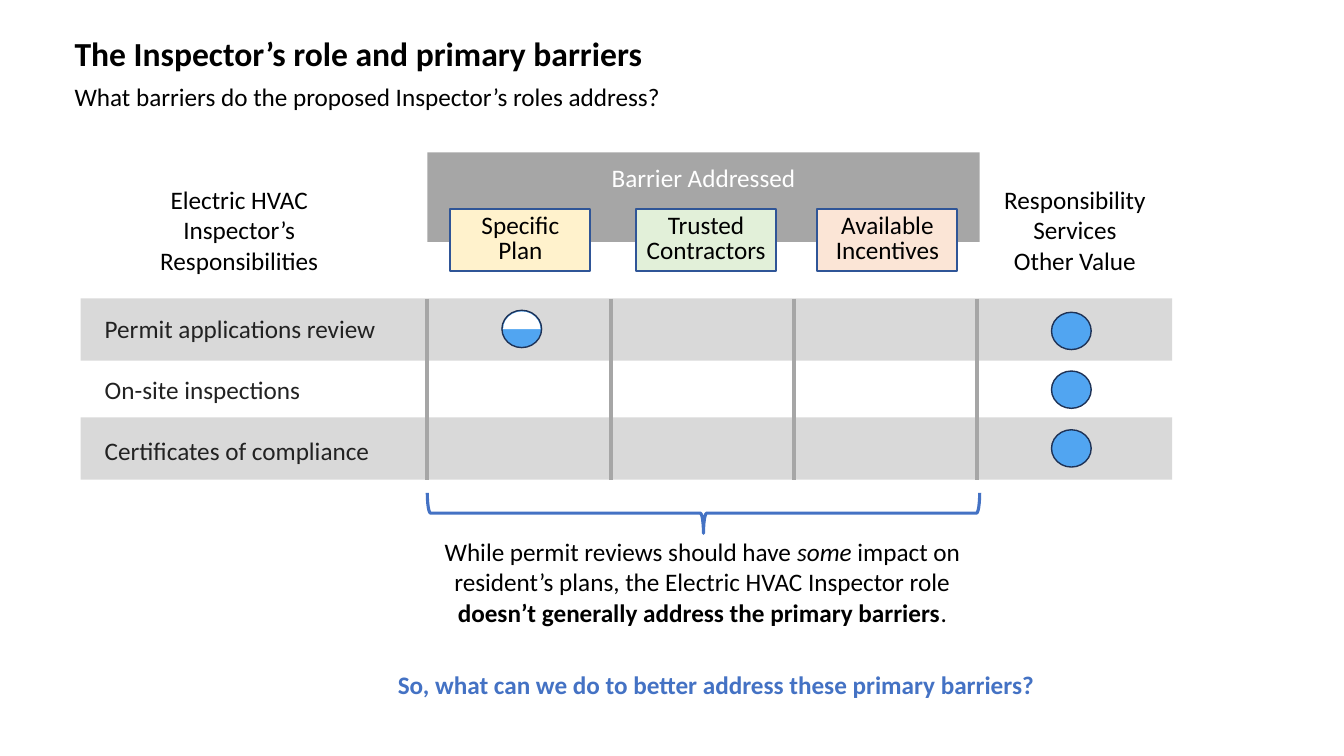
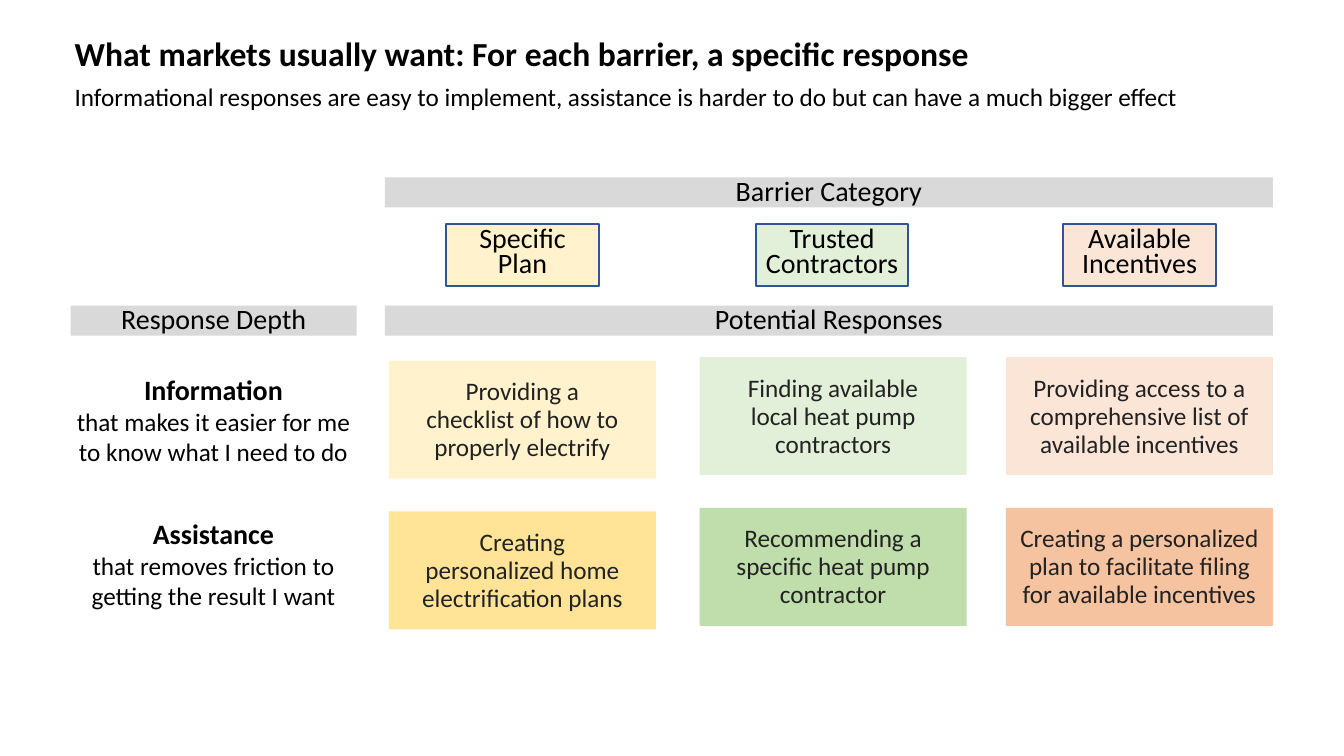
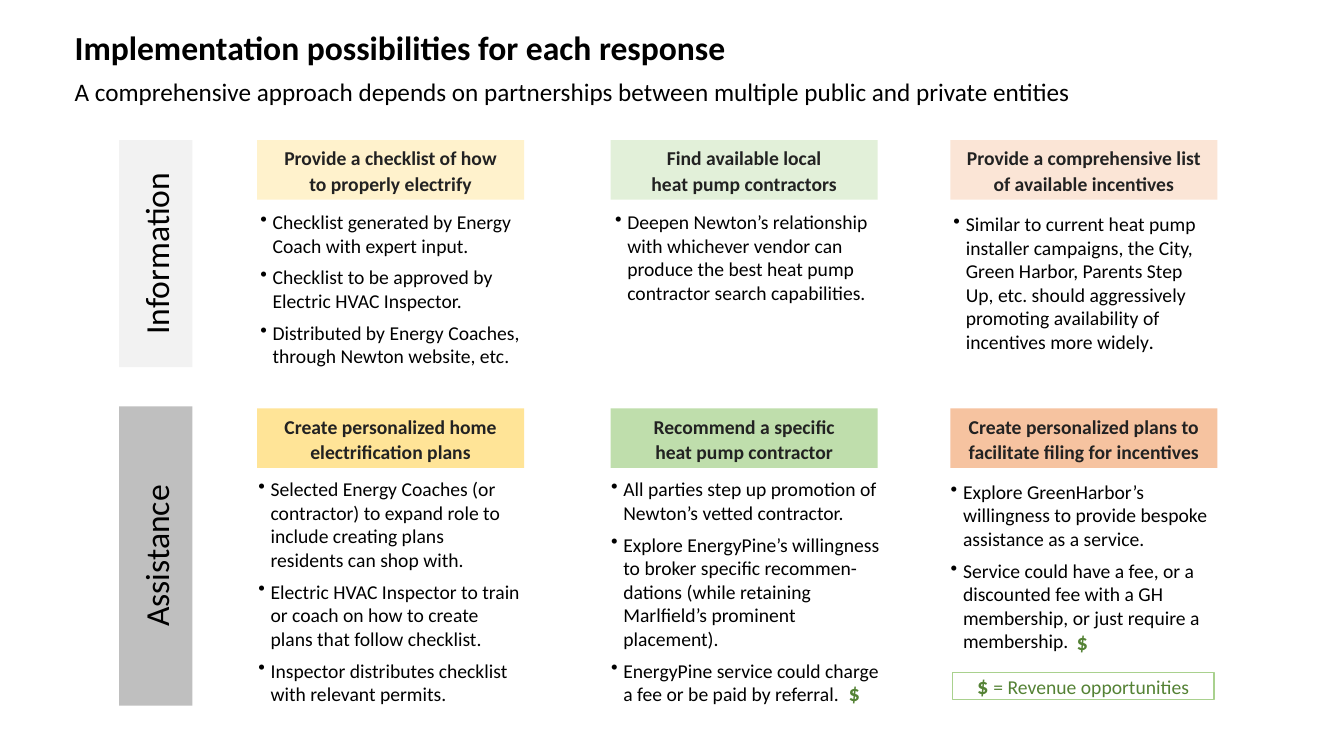
from lxml import etree
from pptx import Presentation
from pptx.dml.color import RGBColor
from pptx.enum.shapes import MSO_CONNECTOR, MSO_SHAPE
from pptx.enum.text import MSO_ANCHOR, PP_ALIGN
from pptx.oxml.ns import qn
from pptx.util import Cm, Pt

FONT = "Calibri"
BLACK, DARK, WHITE = "000000", "222222", "FFFFFF"
BLUE, OUTLINE, GREEN = "4472C4", "2F5597", "548235"
GREY, BAND = "A6A6A6", "D9D9D9"
DOT, DOT_LINE = "51A5F1", "1E3256"
# Barrier name, light fill, strong fill
BARRIERS = [
    ("Specific Plan", "FFF2CC", "FFE497"),
    ("Trusted Contractors", "E2F0D9", "BFDEAC"),
    ("Available Incentives", "FBE5D6", "F6C3A0"),
]
BOLD = {"bold": True}
PLAIN = {"size": Pt(18), "bold": False}


def box(s, x, y, w, h, fill=None, line=None, width=1, kind=MSO_SHAPE.RECTANGLE):
    """Add a preset shape, or a text box when it has neither fill nor line."""
    at = Cm(x), Cm(y), Cm(w), Cm(h)
    if not (fill or line):
        return s.shapes.add_textbox(*at)
    sp = s.shapes.add_shape(kind, *at)
    sp.shadow.inherit = False
    if fill:
        sp.fill.solid()
        sp.fill.fore_color.rgb = RGBColor.from_string(fill)
    else:
        sp.fill.background()
    if line:
        sp.line.color.rgb = RGBColor.from_string(line)
        sp.line.width = Pt(width)
    else:
        sp.line.fill.background()
    return sp


def write(sp, *paragraphs, size=18, color=BLACK, bold=False, align=PP_ALIGN.CENTER,
          leading=None, after=0, anchor=MSO_ANCHOR.TOP,
          inset=(0.25, 0.13, 0.25, 0.13), bullet=False):
    """Fill a shape; a paragraph is a string or a list of (text, font changes)."""
    tf = sp.text_frame
    tf.word_wrap = True
    tf.vertical_anchor = anchor
    tf.margin_left, tf.margin_top, tf.margin_right, tf.margin_bottom = map(Cm, inset)
    for i, runs in enumerate(paragraphs):
        p = tf.add_paragraph() if i else tf.paragraphs[0]
        p.alignment = align
        p.space_after = Pt(after)
        if leading:
            p.line_spacing = Pt(leading)
        if bullet:
            pPr = p._p.get_or_add_pPr()
            pPr.set("marL", str(Cm(0.31)))
            pPr.set("indent", str(-Cm(0.31)))
            etree.SubElement(pPr, qn("a:buChar"), char="•")
        for text, changes in [(runs, {})] if isinstance(runs, str) else runs:
            for j, part in enumerate(text.split("\n")):
                if j:
                    p.add_line_break()
                r = p.add_run()
                r.text = part
                r.font.name = FONT
                r.font.size = Pt(size)
                r.font.bold = bold
                r.font.color.rgb = RGBColor.from_string(color)
                for name, value in changes.items():
                    setattr(r.font, name, value)


prs = Presentation()
prs.slide_width, prs.slide_height = Cm(33.87), Cm(19.05)

# Titles
slides = []
for y, title, subtitle in [
    (0.69, "The Inspector’s role and primary barriers",
     "What barriers do the proposed Inspector’s roles address?"),
    (0.69, "What markets usually want: For each barrier, a specific response",
     "Informational responses are easy to implement, assistance is harder to do "
     "but can have a much bigger effect"),
    (0.56, "Implementation possibilities for each response",
     "A comprehensive approach depends on partnerships between multiple public "
     "and private entities"),
]:
    s = prs.slides.add_slide(prs.slide_layouts[6])
    write(box(s, 1.63, y, 30.56, 2.26), [(title, {"size": Pt(24), "bold": True})],
          subtitle, align=PP_ALIGN.LEFT, after=6)
    slides.append(s)
roles, responses, options = slides

# Slide 1: responsibilities against barriers
s = roles
write(box(s, 10.77, 3.84, 13.92, 2.26, GREY), "Barrier Addressed",
      color=WHITE, inset=(0.25, 0.25, 0.25, 0.13))
for y in (7.52, 10.52):
    box(s, 2.03, y, 27.51, 1.57, BAND)
write(box(s, 2.39, 7.77, 8.66, 4.11), "Permit applications review",
      "On-site inspections", "Certificates of compliance",
      color=DARK, align=PP_ALIGN.LEFT, after=22)
write(box(s, 2.13, 4.52, 7.8, 2.57), "Electric HVAC", "Inspector’s\nResponsibilities")
write(box(s, 24.97, 4.52, 4.24, 2.57), "Responsibility Services Other Value")

for row in range(3):
    box(s, 26.5, 7.87 + 1.48 * row, 1, 0.94, DOT, DOT_LINE, kind=MSO_SHAPE.OVAL)
box(s, 12.65, 7.82, 1, 0.94, DOT, DOT_LINE, kind=MSO_SHAPE.OVAL)
half = box(s, 12.68, 7.85, 0.94, 0.89, WHITE, kind=MSO_SHAPE.PIE)
half.adjustments[0], half.adjustments[1] = 108, 0

for col in range(4):
    x = Cm(10.77 + 4.62 * col)
    divider = s.shapes.add_connector(MSO_CONNECTOR.STRAIGHT, x, Cm(7.53), x, Cm(12.09))
    divider.line.color.rgb = RGBColor.from_string(GREY)
    divider.line.width = Pt(3)
    etree.SubElement(divider._element.spPr, qn("a:effectLst"))

brace = box(s, 17.22, 5.97, 1.02, 13.92, None, BLUE, 2.25, MSO_SHAPE.LEFT_BRACE)
brace.adjustments[0], brace.adjustments[1] = 0.08, 0.5
brace.rotation = 270
write(box(s, 10.74, 13.39, 13.92, 2.57), [
    ("While permit reviews should have ", {}),
    ("some", {"italic": True}),
    (" impact on resident’s plans, the Electric HVAC Inspector role ", {}),
    ("doesn’t generally address the primary barriers", BOLD),
    (".", {}),
])
write(box(s, 9.58, 16.74, 16.94, 1.02),
      "So, what can we do to better address these primary barriers?",
      color=BLUE, bold=True)

# Barrier chips on slides 1 and 2
for s, xs, y, w, size in [
    (roles, (11.35, 16.03, 20.6), 5.26, 3.53, 18),
    (responses, (11.25, 19.05, 26.8), 5.64, 3.84, 20),
]:
    for x, (name, light, strong) in zip(xs, BARRIERS):
        write(box(s, x, y, w, 1.56, light, OUTLINE, 1.5), name,
              size=size, leading=18, inset=(0.2, 0.13, 0.2, 0.13))

# Slide 2: responses by barrier and depth
s = responses
for x, y, w, heading in [
    (9.7, 4.47, 22.38, "Barrier Category"),
    (1.78, 7.7, 7.21, "Response Depth"),
    (9.7, 7.7, 22.38, "Potential Responses"),
]:
    write(box(s, x, y, w, 0.76, BAND), heading, size=20, leading=18,
          anchor=MSO_ANCHOR.MIDDLE, inset=(0.25, 0.1, 0.25, 0))
for y, depth, meaning in [
    (9.25, "Information", "that makes it easier for me to know what I need to do"),
    (12.88, "Assistance", "that removes friction to getting the result I want"),
]:
    write(box(s, 1.47, y, 7.82, 2.64),
          [(depth, BOLD), ("\n" + meaning, PLAIN)], size=20)

# Left, top, then (text, side inset) for information and assistance
RESPONSES = [
    (9.8, 9.09, ("Providing a checklist of how to properly electrify", 0.89),
     ("Creating personalized home electrification plans", 0.74)),
    (17.63, 9, ("Finding available local heat pump contractors", 1.04),
     ("Recommending a specific heat pump contractor", 0.74)),
    (25.35, 9, ("Providing access to a comprehensive list of available incentives", 0.58),
     ("Creating a personalized plan to facilitate filing for available incentives", 0.25)),
]
for (x, y, *cells), (name, *fills) in zip(RESPONSES, BARRIERS):
    for row, ((text, side), fill) in enumerate(zip(cells, fills)):
        write(box(s, x, y + 3.8 * row, 6.73, 2.97, fill), text, color=DARK,
              leading=20, anchor=MSO_ANCHOR.MIDDLE, inset=(side, 0.13, side, 0.13))

# Slide 3: implementation by depth and barrier
s = options
for depth, y, length, fill in [
    ("Information", 3.53, 5.72, "F2F2F2"),
    ("Assistance", 10.24, 7.54, "BFBFBF"),
]:
    thick = 1.85
    bar = box(s, 3 + (thick - length) / 2, y + (length - thick) / 2, length, thick, fill)
    bar.rotation = 270
    write(bar, depth, size=24, anchor=MSO_ANCHOR.MIDDLE)

# Heading, then left, top and width of the list, then its items
INFORMATION = [
    ("Provide a checklist of how\nto properly electrify", 6.48, 5.16, 6.73, [
        "Checklist generated by Energy Coach with expert input.",
        "Checklist to be approved by Electric HVAC Inspector.",
        "Distributed by Energy Coaches, through Newton website, etc."]),
    ("Find available local\nheat pump contractors", 15.42, 5.16, 6.73, [
        "Deepen Newton’s relationship with whichever vendor can produce the best "
        "heat pump contractor search capabilities."]),
    ("Provide a comprehensive list of available incentives", 23.95, 5.21, 6.73, [
        [("Similar to current heat pump installer campaigns, the City, Green Harbor, "
          "Parents Step Up, etc. should aggressively promoting availability of "
          "incentives more widely", {}),
         (".", {"size": Pt(12), "bold": True, "italic": True})]]),
]
ASSISTANCE = [
    ("Create personalized home electrification plans", 6.43, 11.89, 6.78, [
        "Selected Energy Coaches (or contractor) to expand role to include creating "
        "plans residents can shop with.",
        "Electric HVAC Inspector to train or coach on how to create plans that "
        "follow checklist.",
        "Inspector distributes checklist with relevant permits."]),
    ("Recommend a specific\nheat pump contractor", 15.32, 11.89, 7.19, [
        "All parties step up promotion of Newton’s vetted contractor.",
        "Explore EnergyPine’s willingness to broker specific recommen-dations "
        "(while retaining Marlfield’s prominent placement).",
        "EnergyPine service could charge a fee or be paid by referral."]),
    ("Create personalized plans to facilitate filing for incentives",
     23.88, 11.96, 7.19, [
        "Explore GreenHarbor’s willingness to provide bespoke assistance as a service.",
        "Service could have a fee, or a discounted fee with a GH membership, "
        "or just require a membership."]),
]
for y, list_height, shade, cells in [(3.53, 4.2, 1, INFORMATION), (10.29, 6.1, 2, ASSISTANCE)]:
    for head_x, barrier, (heading, x, top, w, items) in zip((6.48, 15.39, 23.95), BARRIERS, cells):
        write(box(s, head_x, y, 6.73, 1.5, barrier[shade]), heading, size=14,
              color=DARK, bold=True, leading=18, anchor=MSO_ANCHOR.MIDDLE)
        write(box(s, x, top, w, list_height), *items, size=14, align=PP_ALIGN.LEFT,
              after=6, inset=(0.08, 0.13, 0.08, 0.13), bullet=True)

# Revenue marks and their key
for x, y in [(21.39, 17.12), (27.13, 15.82)]:
    write(box(s, x, y, 0.41, 0.65), "$", size=16, color=GREEN, bold=True,
          align=PP_ALIGN.LEFT, inset=(0, 0, 0, 0))
write(box(s, 24, 16.94, 6.6, 0.69, None, "A9D18E"),
      [("$ ", {"size": Pt(16), "bold": True}), ("= Revenue opportunities", {})],
      size=14, color=GREEN, inset=(0, 0, 0, 0))

prs.save("out.pptx")
